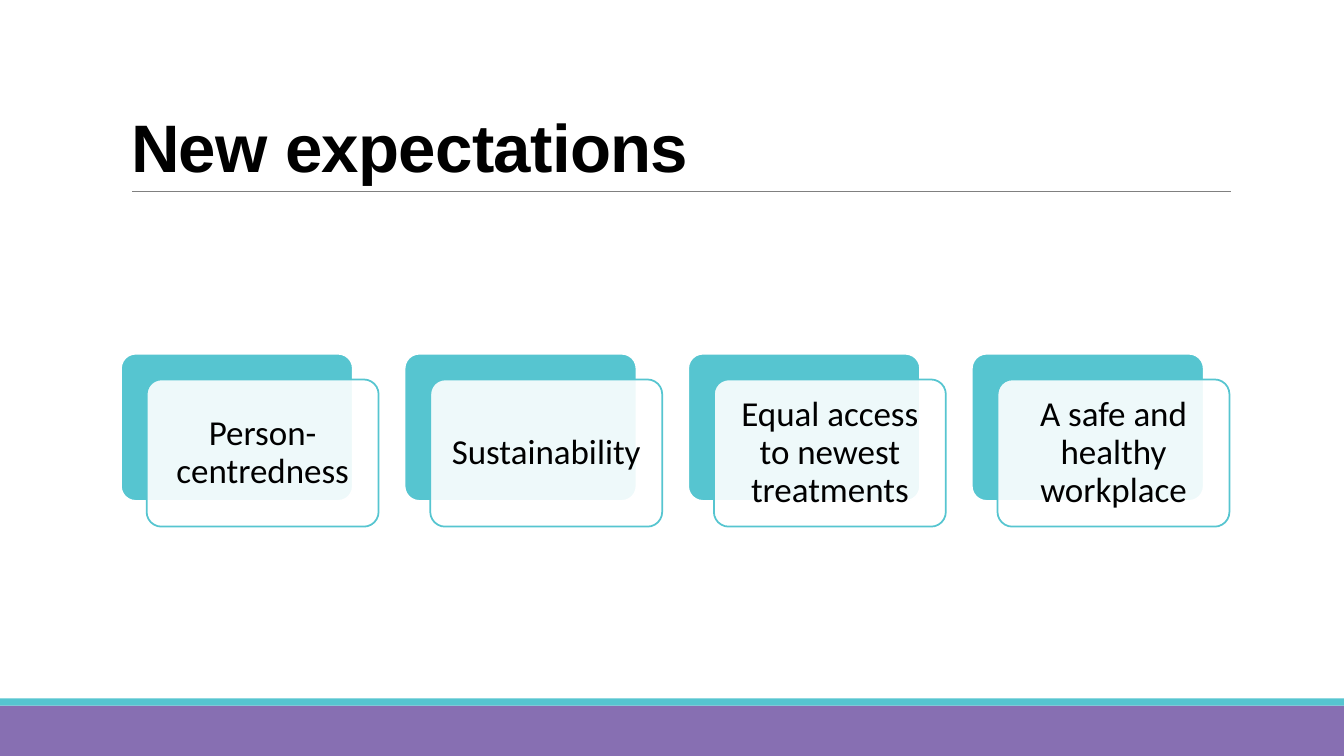
from pptx import Presentation
from pptx.dml.color import RGBColor
from pptx.enum.shapes import MSO_CONNECTOR as CONNECTOR, MSO_SHAPE as SHAPE
from pptx.enum.text import MSO_ANCHOR as ANCHOR, PP_ALIGN as ALIGN
from pptx.oxml.ns import qn
from pptx.util import Inches, Pt
from lxml.etree import SubElement

TITLE = "New expectations"
EXPECTATIONS = [
    "Person-centredness",
    "Sustainability",
    "Equal access to newest treatments",
    "A safe and healthy workplace",
]
TEAL, PURPLE, GREY, WHITE, BLACK = "56C5D0", "876FB2", "808080", "FFFFFF", "000000"
BANDS = [(7, 0.5, PURPLE), (6.93, 0.07, TEAL)]  # top, height, colour

SLIDE_W, SLIDE_H = 13.33, 7.5
CARD_W, CARD_H = 2.3, 1.46
CARD_LEFT, CARD_TOP, CARD_STEP = 1.2, 3.51, 2.813
CARD_SHIFT = 0.255


def rgb(color):
    return RGBColor.from_string(color)


def add_box(s, kind, x, y, w, h, fill, line=None):
    sp = s.shapes.add_shape(kind, Inches(x), Inches(y), Inches(w), Inches(h))
    sp.shadow.inherit = False
    sp.fill.solid()
    sp.fill.fore_color.rgb = rgb(fill)
    if line:
        sp.line.color.rgb = rgb(line)
        sp.line.width = Pt(1.25)
    else:
        sp.line.fill.background()
    return sp


def add_card(s, x, y, fill, line):
    sp = add_box(s, SHAPE.ROUNDED_RECTANGLE, x, y, CARD_W, CARD_H, fill, line)
    sp.adjustments[0] = 0.1
    return sp


def set_opacity(sp, percent):
    color = sp.fill._xPr.find(qn("a:solidFill"))[0]
    SubElement(color, qn("a:alpha")).set("val", str(percent * 1000))


def add_title(s):
    sp = s.shapes.title
    sp.left, sp.top, sp.width, sp.height = map(Inches, (1.2, 0.31, 11, 1.59))
    tf = sp.text_frame
    tf.text = TITLE
    tf.vertical_anchor = ANCHOR.BOTTOM
    p = tf.paragraphs[0]
    p.alignment = ALIGN.LEFT
    p.line_spacing = 0.85
    p.font.name, p.font.size, p.font.bold = "Arial", Pt(48), True
    p.font.color.rgb = rgb(BLACK)
    p.runs[0]._r.get_or_add_rPr().set("spc", "-50")


def add_rule(s):
    line = s.shapes.add_connector(
        CONNECTOR.STRAIGHT, Inches(1.31), Inches(1.9), Inches(12.21), Inches(1.9))
    line.line.color.rgb = rgb(GREY)
    line.line.width = Pt(0.5)
    SubElement(line._element.spPr, qn("a:effectLst"))


def add_expectation(s, x, text):
    add_card(s, x, CARD_TOP, TEAL, WHITE)
    sp = add_card(s, x + CARD_SHIFT, CARD_TOP + CARD_SHIFT, WHITE, TEAL)
    set_opacity(sp, 90)
    tf = sp.text_frame
    tf.text = text
    tf.word_wrap = True
    tf.vertical_anchor = ANCHOR.MIDDLE
    tf.margin_left = tf.margin_right = tf.margin_top = tf.margin_bottom = Inches(0.1)
    p = tf.paragraphs[0]
    p.alignment = ALIGN.CENTER
    p.line_spacing = 0.9
    p.font.name, p.font.size = "Calibri", Pt(25)
    p.font.color.rgb = rgb(BLACK)


def main():
    prs = Presentation()
    prs.slide_width, prs.slide_height = Inches(SLIDE_W), Inches(SLIDE_H)
    s = prs.slides.add_slide(prs.slide_layouts[5])
    for top, height, color in BANDS:
        add_box(s, SHAPE.RECTANGLE, 0, top, SLIDE_W, height, color)
    add_rule(s)
    add_title(s)
    for i, text in enumerate(EXPECTATIONS):
        add_expectation(s, CARD_LEFT + i * CARD_STEP, text)
    prs.save("out.pptx")


if __name__ == "__main__":
    main()
